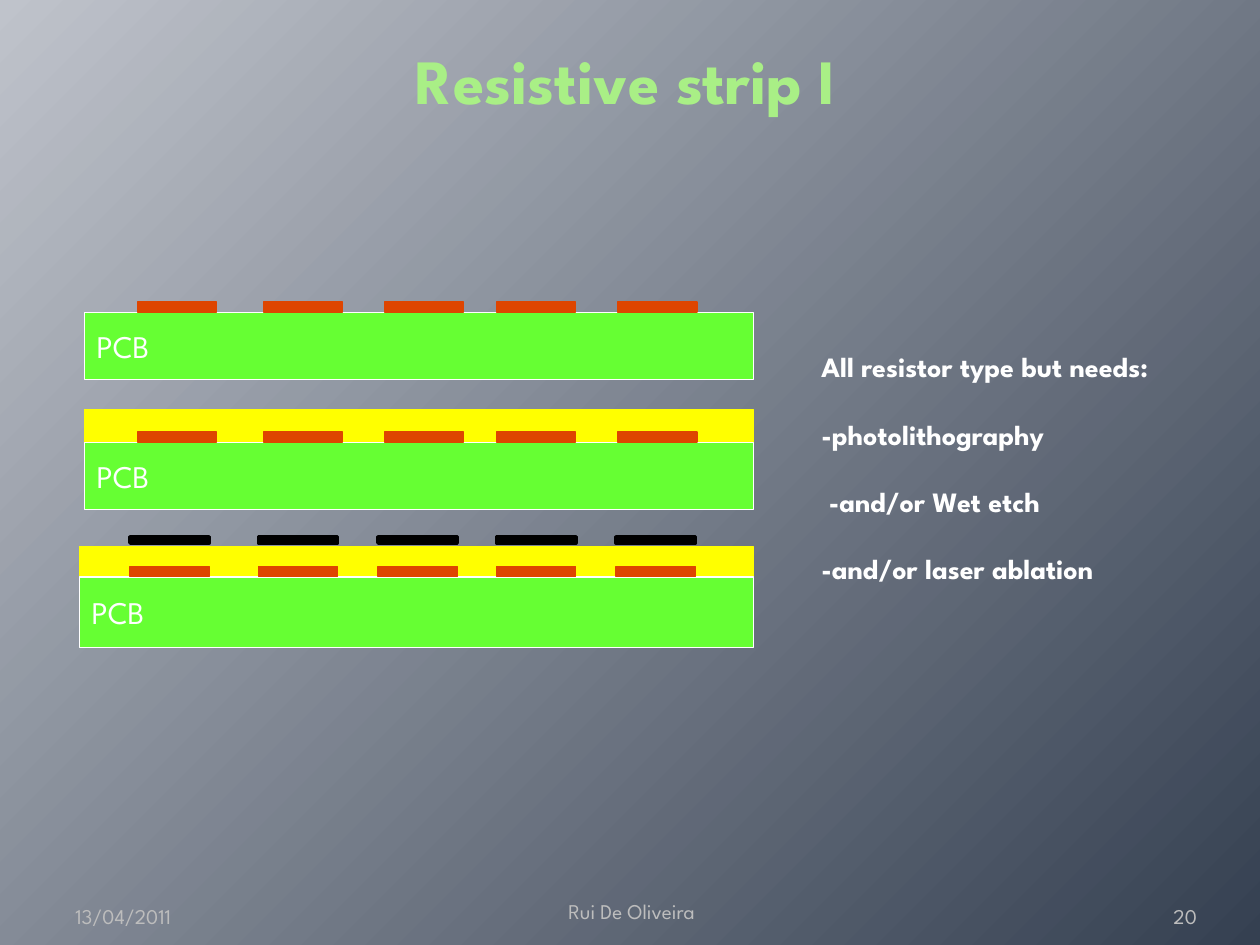
from dataclasses import dataclass

import pptx
import pptx.dml.color
import pptx.enum.shapes
import pptx.enum.text
import pptx.util
from pptx.enum.text import MSO_ANCHOR, PP_ALIGN
from pptx.util import Cm

FONT = "League Spartan"
COLOURS = {
    "light": "BFC3CB",
    "dark": "354051",
    "title": "A9EF86",
    "text": "FFFFFF",
    "footer": "BDBDBD",
    "board": "66FF33",
    "strip": "DE4500",
    "resist": "FFFF00",
    "mask": "000000",
}
STRIP_WIDTH = 1.6
STRIP_HEIGHT = 0.2
STRIP_RISE = 0.21
RESIST_HEIGHT = 0.66
MASK_HEIGHT = 0.13


@dataclass
class Area:
    """A rectangle in centimetres."""
    left: float
    top: float
    width: float
    height: float

    def lengths(self) -> list:
        return [Cm(n) for n in (self.left, self.top, self.width, self.height)]


@dataclass
class Stage:
    """One production step: a board with strips, and the layers above it."""
    board: Area
    strip_lefts: tuple
    resist_top: float | None = None
    mask_top: float | None = None


@dataclass
class Label:
    area: Area
    lines: tuple
    size: float
    colour: str
    align: PP_ALIGN = PP_ALIGN.LEFT
    anchor: MSO_ANCHOR = MSO_ANCHOR.BOTTOM
    bold: bool = False
    gap: float = 0
    side_inset: float = 0.25


EVEN_LEFTS = (2.77, 5.31, 7.75, 10.01, 12.45)
MASKED_LEFTS = (2.62, 5.21, 7.62, 10.01, 12.42)
STAGES = (
    Stage(Area(1.7, 6.3, 13.49, 1.35), EVEN_LEFTS),
    Stage(Area(1.7, 8.92, 13.49, 1.35), EVEN_LEFTS, resist_top=8.26),
    Stage(Area(1.6, 11.63, 13.59, 1.42), MASKED_LEFTS, resist_top=11.02, mask_top=10.82),
)
REQUIREMENTS = (
    "All resistor type but needs:",
    "-photolithography",
    " -and/or Wet etch",
    "-and/or laser ablation",
)
LABELS = (
    Label(Area(1.19, 0, 22.86, 3.18), ("Resistive strip I",), 36, "title",
          PP_ALIGN.CENTER, MSO_ANCHOR.MIDDLE, bold=True),
    Label(Area(16.31, 6.93, 8.53, 5.74), REQUIREMENTS, 16, "text",
          anchor=MSO_ANCHOR.TOP, bold=True, gap=19.25),
    Label(Area(1.27, 17.83, 5.92, 1.02), ("13/04/2011",), 12, "footer"),
    Label(Area(8.71, 17.73, 8.05, 1.02), ("Rui De Oliveira",), 12, "footer", PP_ALIGN.CENTER),
    Label(Area(22.02, 17.83, 2.11, 1.02), ("20",), 12, "footer", PP_ALIGN.RIGHT, side_inset=0),
)


def rgb(name: str) -> pptx.dml.color.RGBColor:
    return pptx.dml.color.RGBColor.from_string(COLOURS[name])


def write_text(box, label: Label) -> None:
    frame = box.text_frame
    frame_format = {
        "word_wrap": True,
        "vertical_anchor": label.anchor,
        "margin_left": Cm(label.side_inset),
        "margin_right": Cm(label.side_inset),
    }
    for name, value in frame_format.items():
        setattr(frame, name, value)
    font_format = {"name": FONT, "size": pptx.util.Pt(label.size), "bold": label.bold}
    for index, line in enumerate(label.lines):
        para = frame.add_paragraph() if index else frame.paragraphs[0]
        para.alignment = label.align
        para.space_before = pptx.util.Pt(label.gap if index else 0)
        span = para.add_run()
        span.text = line
        for name, value in font_format.items():
            setattr(span.font, name, value)
        span.font.color.rgb = rgb(label.colour)


def draw_label(page, label: Label) -> None:
    write_text(page.shapes.add_textbox(*label.area.lengths()), label)


def draw_block(page, area: Area, fill: str, line: str, line_width: float = 0.75):
    block = page.shapes.add_shape(pptx.enum.shapes.MSO_SHAPE.RECTANGLE, *area.lengths())
    block.shadow.inherit = False
    block.fill.solid()
    block.fill.fore_color.rgb = rgb(fill)
    block.line.color.rgb = rgb(line)
    block.line.width = pptx.util.Pt(line_width)
    return block


def draw_stage(page, stage: Stage) -> None:
    board = stage.board
    if stage.resist_top is not None:
        resist = Area(board.left, stage.resist_top, board.width, RESIST_HEIGHT)
        draw_block(page, resist, "resist", "resist")
    block = draw_block(page, board, "board", "text")
    write_text(block, Label(board, ("PCB",), 18, "text", anchor=MSO_ANCHOR.MIDDLE))
    for left in stage.strip_lefts:
        strip = Area(left, board.top - STRIP_RISE, STRIP_WIDTH, STRIP_HEIGHT)
        draw_block(page, strip, "strip", "strip")
        if stage.mask_top is not None:
            mask = Area(left, stage.mask_top, STRIP_WIDTH, MASK_HEIGHT)
            draw_block(page, mask, "mask", "mask", 2)


def paint_background(page) -> None:
    """Shade the page from the light top left to the dark bottom right."""
    fill = page.background.fill
    fill.gradient()
    fill.gradient_angle = 315
    for stop, position, name in zip(fill.gradient_stops, (0, 1), ("light", "dark")):
        stop.position = position
        stop.color.rgb = rgb(name)


def main() -> None:
    deck = pptx.Presentation()
    deck.slide_width, deck.slide_height = Cm(25.4), Cm(19.05)
    page = deck.slides.add_slide(deck.slide_layouts[6])
    paint_background(page)
    for stage in STAGES:
        draw_stage(page, stage)
    for label in LABELS:
        draw_label(page, label)
    deck.save("out.pptx")


if __name__ == "__main__":
    main()
